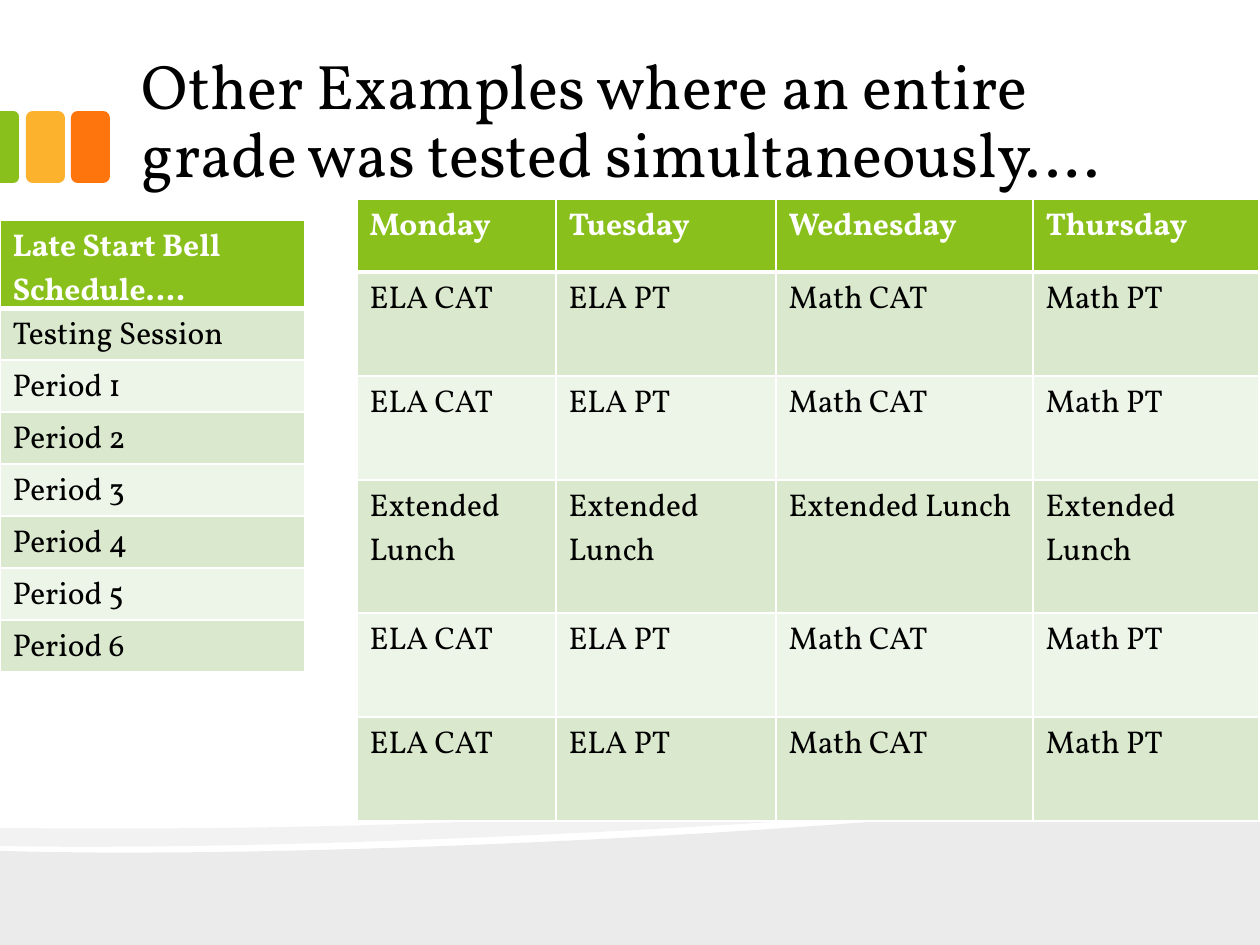
from lxml import etree
from pptx import Presentation
from pptx.dml.color import RGBColor
from pptx.enum.shapes import MSO_SHAPE
from pptx.enum.text import MSO_ANCHOR
from pptx.oxml.ns import qn
from pptx.util import Emu, Pt

ROUND, ROUND_TOP = MSO_SHAPE.ROUNDED_RECTANGLE, MSO_SHAPE.ROUND_2_SAME_RECTANGLE
BOTTOM = MSO_ANCHOR.BOTTOM
PX = 914400 // 126
FONT = "Vollkorn"
COLORS = {
    "black": "000000", "white": "FFFFFF", "green": "89C01C",
    "amber": "FCB22C", "orange": "FE750E",
    "band_dark": "DAE8CD", "band_light": "EDF4E8",
}
TITLE = "Other Examples where an entire grade was tested simultaneously…."
BELL_ROWS = [["Late Start Bell Schedule…."], ["Testing Session"]]
BELL_ROWS += [[f"Period {n}"] for n in range(1, 7)]
TESTS = ["ELA CAT", "ELA PT", "Math CAT", "Math PT"]
WEEK_ROWS = [["Monday", "Tuesday", "Wednesday", "Thursday"],
             TESTS, TESTS, ["Extended Lunch"] * 4, TESTS, TESTS]


def px(n):
    return Emu(round(n * PX))


def rgb(name):
    return RGBColor.from_string(COLORS[name])


def paint(sp, color, alpha=None):
    sp.shadow.inherit = False
    sp.fill.solid()
    sp.fill.fore_color.rgb = rgb(color)
    sp.line.fill.background()
    if alpha:
        clr = sp.fill._xPr.find(qn("a:solidFill"))[0]
        etree.SubElement(clr, qn("a:alpha")).set("val", str(alpha * 1000))


def write(tf, text, size=18, color="black", bold=False, spacing=None):
    p = tf.paragraphs[0]
    p.line_spacing = spacing
    r = p.add_run()
    r.text = text
    r.font.name, r.font.size, r.font.bold = FONT, Pt(size), bold
    r.font.color.rgb = rgb(color)


def curve(p0, p1, p2, p3, steps=24):
    """Points along a cubic curve."""
    points = []
    for i in range(steps + 1):
        t = i / steps
        u = 1 - t
        points.append(tuple(
            u**3 * a + 3 * u * u * t * b + 3 * u * t * t * c + t**3 * d
            for a, b, c, d in zip(p0, p1, p2, p3)))
    return points


def add_outline(s, points, color, alpha):
    (x, y), *rest = [(px(a), px(b)) for a, b in points]
    fb = s.shapes.build_freeform(x, y)
    fb.add_line_segments(rest)
    paint(fb.convert_to_shape(), color, alpha)


def add_waves(s, x, y, w, h):
    def at(*points):
        return curve(*[(x + a, y + b) for a, b in points])

    # Lower ground
    ground = at((0, 105), (333, 115), (985, 80), (w, 33))
    add_outline(s, ground + [(x + w, y + h), (x, y + h)], "black", 8)
    # Thin band above it
    top = at((0, 82), (616, 88), (917, 44), (w, 0))
    right = at((w, 25), (1187, 39), (1086, 52), (973, 62))
    left = at((973, 62), (659, 87), (243, 105), (0, 100))
    add_outline(s, top + right + left, "black", 5)


def add_tabs(s, x, y, w, h):
    # Whole tabs
    for left, color in ((x + 26, "amber"), (x + 71, "orange")):
        sp = s.shapes.add_shape(ROUND, px(left), px(y), px(w), px(h))
        paint(sp, color)
    # Half tab at the slide edge, turned so its round side faces right
    half = w // 2
    sp = s.shapes.add_shape(ROUND_TOP, px(x + (half - h) / 2),
                            px(y + (h - half) / 2), px(h), px(half))
    sp.rotation = 90
    sp.adjustments[0] = 0.29
    paint(sp, "green")


def add_title(s, x, y, w, h):
    tf = s.shapes.add_textbox(px(x), px(y), px(w), px(h)).text_frame
    tf.word_wrap = True
    tf.vertical_anchor = BOTTOM
    tf.margin_left = tf.margin_right = px(16)
    tf.margin_top = tf.margin_bottom = px(9)
    write(tf, TITLE, size=36, spacing=0.9)


def add_borders(cell, bottom):
    tc_pr = cell._tc.get_or_add_tcPr()
    widths = {"a:lnL": 1, "a:lnR": 1, "a:lnT": 1, "a:lnB": bottom}
    for i, (tag, width) in enumerate(widths.items()):
        ln = etree.Element(qn(tag), w=str(Pt(width)))
        fill = etree.SubElement(ln, qn("a:solidFill"))
        etree.SubElement(fill, qn("a:srgbClr"), val=COLORS["white"])
        tc_pr.insert(i, ln)


def add_schedule(s, x, y, cols, heights, rows):
    frame = s.shapes.add_table(len(rows), len(cols), px(x), px(y),
                               px(sum(cols)), px(sum(heights)))
    table = frame.table
    for col, w in zip(table.columns, cols):
        col.width = px(w)
    for i, (row, h, texts) in enumerate(zip(table.rows, heights, rows)):
        row.height = px(h)
        head = i == 0
        band = "green" if head else "band_dark" if i % 2 else "band_light"
        for cell, text in zip(row.cells, texts):
            cell.fill.solid()
            cell.fill.fore_color.rgb = rgb(band)
            add_borders(cell, bottom=3 if head else 1)
            write(cell.text_frame, text, bold=head,
                  color="white" if head else "black")


def main():
    prs = Presentation()
    prs.slide_width, prs.slide_height = px(1260), px(945)
    s = prs.slides.add_slide(prs.slide_layouts[6])
    add_waves(s, 0, 746, 1260, 199)
    add_tabs(s, 0, 111, 39, 72)
    add_title(s, 126, 21, 1008, 179)
    # Bell schedule on the left, test week on the right
    add_schedule(s, 0, 220, [305], [52] * 8, BELL_ROWS)
    add_schedule(s, 357, 199, [199, 220, 257, 226],
                 [73, 104, 104, 133, 104, 104], WEEK_ROWS)
    prs.save("out.pptx")


if __name__ == "__main__":
    main()
